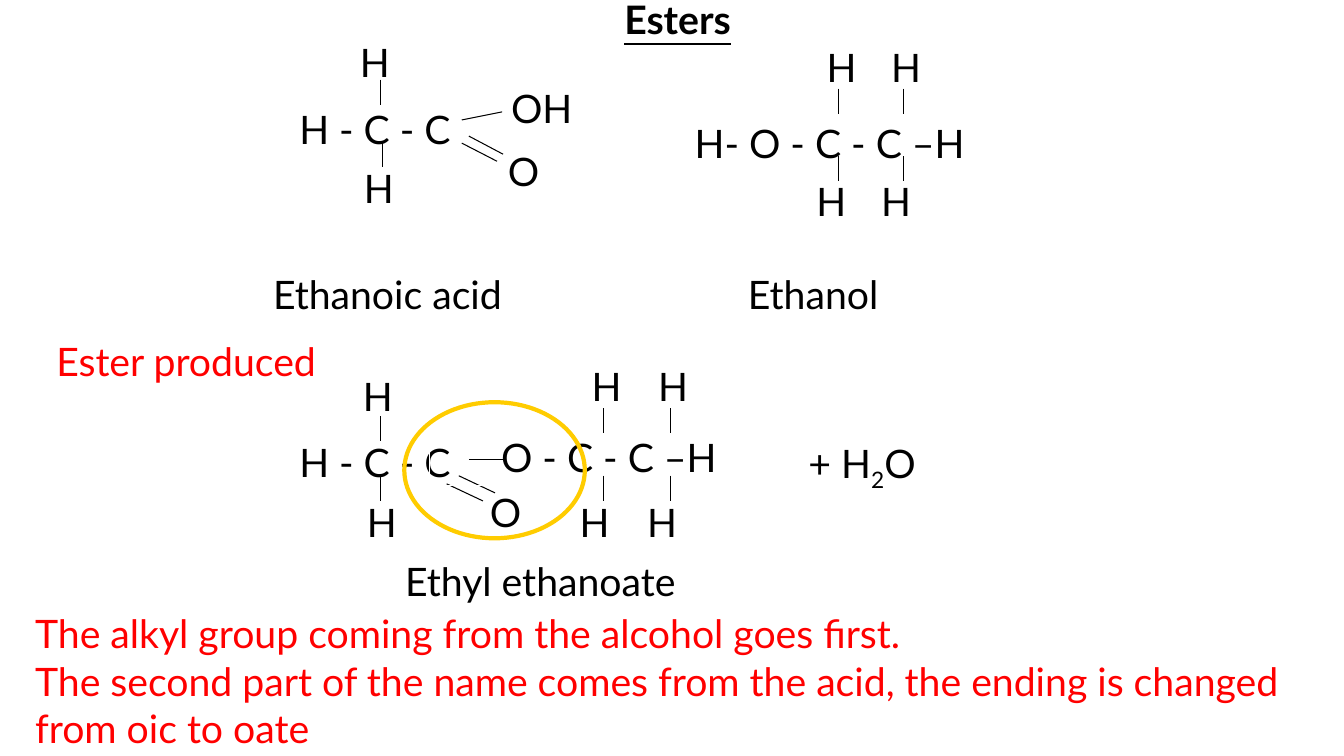
from dataclasses import dataclass

from lxml.etree import SubElement
from pptx import Presentation
from pptx.dml.color import RGBColor
from pptx.enum.shapes import MSO_CONNECTOR as Connector, MSO_SHAPE as Preset
from pptx.enum.text import MSO_ANCHOR as Anchor, MSO_AUTO_SIZE as AutoSize, PP_ALIGN as Align
from pptx.oxml.ns import qn
from pptx.shapes.shapetree import GroupShapes, SlideShapes
from pptx.text.text import TextFrame
from pptx.util import Inches, Pt

COLORS = {"text": "000000", "note": "FF0000", "frame": "FFFFFF", "ring": "FFCC00"}
FONT = "Lato"
LINE_HEIGHT = 0.57
TALL = 1.51
BOND_LENGTH = 0.25


@dataclass(frozen=True)
class Label:
    text: str
    left: float
    top: float
    width: float = 0.64
    height: float = LINE_HEIGHT
    color: str = "text"
    framed: bool = False
    inset: float = 0.1
    subscript: str = ""
    ending: str = ""


@dataclass(frozen=True)
class Bond:
    x1: float
    y1: float
    x2: float
    y2: float


Pieces = tuple[Label | Bond, ...]


def atom(text: str, left: float, top: float, width: float = 0.64,
         height: float = LINE_HEIGHT, inset: float = 0.1) -> Label:
    return Label(text, left, top, width, height, framed=True, inset=inset)


def upright_bonds(top: float, *columns: float) -> Pieces:
    return tuple(Bond(x, top, x, top + BOND_LENGTH) for x in columns)


ETHANOIC_ACID: Pieces = (
    atom("H - C - C", 2.87, 1, 2.56),
    atom("H", 3.47, 0.33),
    atom("H", 3.51, 1.58),
    *upright_bonds(1.41, 3.79),
    *upright_bonds(0.79, 3.77),
    atom("OH", 4.97, 0.79, 1.21),
    atom("O", 4.94, 1.41, height=TALL),
    Bond(4.98, 1.11, 4.58, 1.19),
    Bond(4.65, 1.35, 4.99, 1.53),
    Bond(4.58, 1.42, 4.93, 1.6),
)

ETHANOL: Pieces = (
    atom("H", 8, 1.71, height=TALL),
    atom("H- O - C - C –H", 6.61, 1.13, 4.2, inset=0.28),
    atom("H", 8.74, 0.38),
    atom("H", 8.64, 1.71),
    atom("H", 8.1, 0.38),
    *upright_bonds(1.55, 8.32, 8.96),
    *upright_bonds(0.88, 8.32, 8.96),
)

ETHYL_ETHANOATE: Pieces = (
    atom("H - C - C", 2.87, 4.3, 2.67),
    atom("H", 3.5, 3.64, 0.67),
    atom("H", 3.54, 4.89, 0.67),
    *upright_bonds(4.72, 3.77),
    *upright_bonds(4.13, 3.77),
    atom("O", 4.76, 4.79, 0.67, TALL),
    Bond(4.55, 4.72, 4.91, 4.89),
    Bond(4.43, 4.8, 4.79, 4.97),
    atom("H", 5.65, 4.89, 0.67, TALL),
    atom("O - C - C –H", 4.26, 4.25, 4.38, inset=0.71),
    atom("H", 6.43, 3.55, 0.67),
    atom("H", 6.32, 4.89, 0.67),
    atom("H", 5.77, 3.55, 0.67),
    *upright_bonds(4.72, 5.99, 6.65),
    *upright_bonds(4.05, 5.99, 6.65),
    Bond(4.65, 4.56, 4.99, 4.56),
    Label("Ethyl ethanoate", 3.92, 5.48, 6),
    Label("+ H", 7.92, 4.31, 2.11, subscript="2", ending="O"),
)

REACTANT_NAMES: Pieces = (
    Label("Ethanoic acid", 2.61, 2.63, 3.2),
    Label("Ethanol", 7.32, 2.63, 2.99),
)
ESTER_HEADING = Label("Ester produced", 0.46, 3.3, 2.91, color="note")
NAMING_RULE = Label(
    "The alkyl group coming from the alcohol goes first.\n"
    "The second part of the name comes from the acid, "
    "the ending is changed from oic to oate",
    0.25, 6, 12.81, TALL, color="note",
)


def rgb(name: str) -> RGBColor:
    return RGBColor.from_string(COLORS[name])


def format_text(text_frame: TextFrame, color: str, align: Align = Align.LEFT) -> None:
    text_frame.word_wrap = True
    text_frame.auto_size = AutoSize.NONE
    text_frame.vertical_anchor = Anchor.TOP
    for paragraph in text_frame.paragraphs:
        paragraph.alignment = align
        for run in paragraph.runs:
            run.font.name = FONT
            run.font.size = Pt(28)
            run.font.color.rgb = rgb(color)


def draw_label(shapes: SlideShapes | GroupShapes, label: Label) -> None:
    box = [Inches(value) for value in (label.left, label.top, label.width, label.height)]
    if label.framed:
        shape = shapes.add_shape(Preset.RECTANGLE, *box)
        shape.shadow.inherit = False
        shape.fill.background()
        shape.line.color.rgb = rgb("frame")
        shape.line.width = Pt(0.75)
    else:
        shape = shapes.add_textbox(*box)
    text_frame = shape.text_frame
    text_frame.text = label.text
    text_frame.margin_left = Inches(label.inset)
    if label.subscript:
        paragraph = text_frame.paragraphs[0]
        subscript = paragraph.add_run()
        subscript.text = label.subscript
        subscript._r.get_or_add_rPr().set("baseline", "-25000")
        paragraph.add_run().text = label.ending
    format_text(text_frame, label.color)


def draw_bond(shapes: SlideShapes | GroupShapes, bond: Bond) -> None:
    ends = [Inches(value) for value in (bond.x1, bond.y1, bond.x2, bond.y2)]
    connector = shapes.add_connector(Connector.STRAIGHT, *ends)
    connector.line.color.rgb = rgb("text")
    connector.line.width = Pt(0.75)
    SubElement(connector._element.spPr, qn("a:effectLst"))


def draw_pieces(shapes: SlideShapes | GroupShapes, pieces: Pieces) -> None:
    for piece in pieces:
        if isinstance(piece, Label):
            draw_label(shapes, piece)
        else:
            draw_bond(shapes, piece)


def main() -> None:
    presentation = Presentation()
    presentation.slide_width = Inches(13.33)
    presentation.slide_height = Inches(7.5)
    slide = presentation.slides.add_slide(presentation.slide_layouts[5])
    shapes = slide.shapes

    title = shapes.title
    title.left, title.top = Inches(0.25), Inches(-0.1)
    title.width, title.height = Inches(12.94), Inches(LINE_HEIGHT)
    title.text_frame.text = "Esters"
    format_text(title.text_frame, "text", Align.CENTER)
    title_font = title.text_frame.paragraphs[0].runs[0].font
    title_font.bold = title_font.underline = True

    for molecule in (ETHANOIC_ACID, ETHANOL):
        draw_pieces(shapes.add_group_shape().shapes, molecule)
    draw_pieces(shapes, REACTANT_NAMES)
    draw_pieces(shapes.add_group_shape().shapes, ETHYL_ETHANOATE)
    draw_label(shapes, ESTER_HEADING)

    ring = shapes.add_shape(Preset.OVAL, Inches(4.01), Inches(3.99), Inches(1.79), Inches(1.35))
    ring.shadow.inherit = False
    ring.fill.background()
    ring.line.color.rgb = rgb("ring")
    ring.line.width = Pt(3)

    draw_label(shapes, NAMING_RULE)
    presentation.save("out.pptx")


if __name__ == "__main__":
    main()
